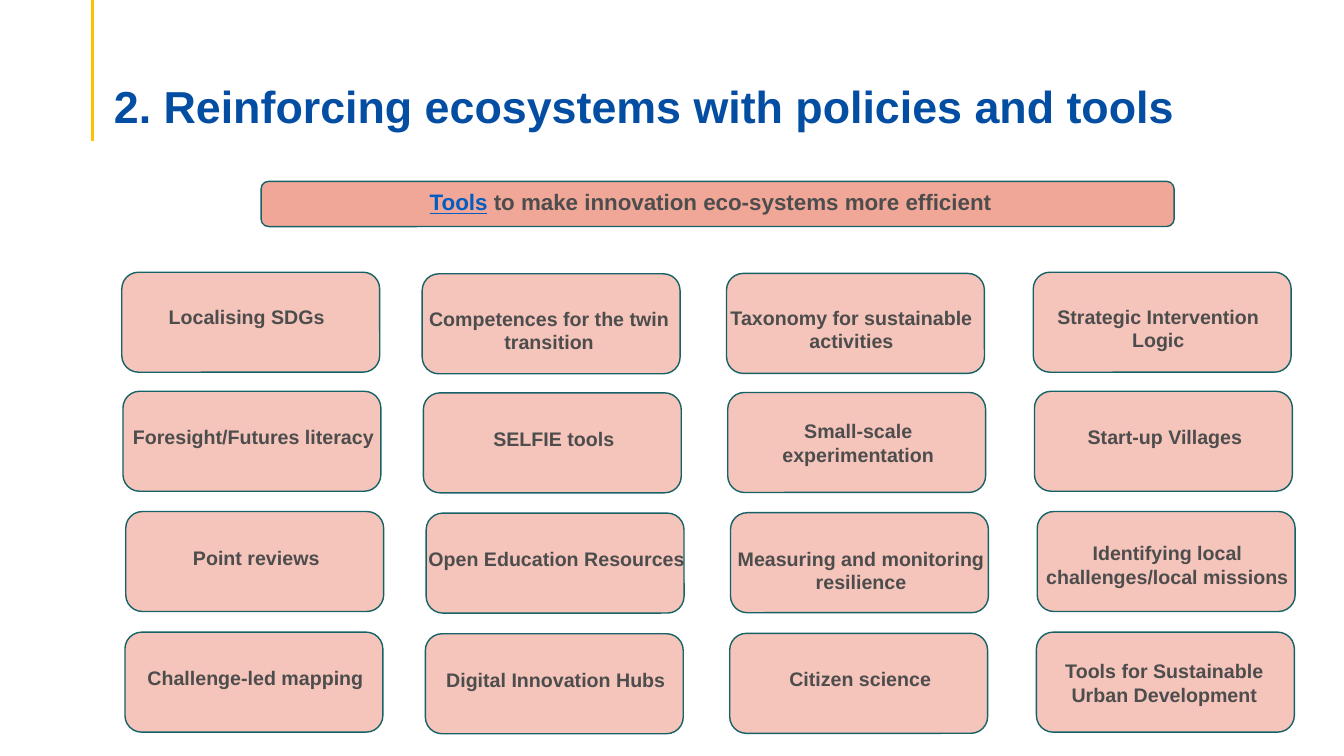
"""Build a slide showing a grid of policy tools for innovation ecosystems."""
from lxml import etree
from pptx import Presentation
from pptx.dml.color import RGBColor
from pptx.enum.shapes import MSO_CONNECTOR, MSO_SHAPE
from pptx.enum.text import MSO_ANCHOR, PP_ALIGN
from pptx.oxml.ns import qn
from pptx.util import Cm, Pt

COLORS = {
    "accent": "FFC000",
    "title": "034EA2",
    "link": "035DC1",
    "text": "4D4D4D",
    "banner": "F1A798",
    "card": "F5C4BA",
    "outline": "166267",
}

TOOL_ROWS = [
    ["Localising SDGs", "Competences for the twin transition",
     "Taxonomy for sustainable activities", "Strategic Intervention Logic"],
    ["Foresight/Futures literacy", "SELFIE tools",
     "Small-scale experimentation", "Start-up Villages"],
    ["Point reviews", "Open Education Resources",
     "Measuring and monitoring resilience", "Identifying local challenges/local missions"],
    ["Challenge-led mapping", "Digital Innovation Hubs",
     "Citizen science", "Tools for Sustainable Urban Development"],
]
COLUMNS = [(3.07, 0), (10.64, 0.04), (18.31, 0.03), (26.04, 0)]
ROWS = [(6.86, 0), (9.86, 0.03), (12.89, 0.1), (15.93, 0.08)]
LABEL_PLACES = {
    "Competences for the twin transition": (-0.18, 0.7, 6.76),
    "Small-scale experimentation": (-0.23, 0.55, 7.04),
    "Identifying local challenges/local missions": (-0.24, 0.62, 7.04),
    "Tools for Sustainable Urban Development": (-0.1, 0.55, 6.65),
}


def add_box(left, top, width, height, fill):
    box = slide.shapes.add_shape(
        MSO_SHAPE.ROUNDED_RECTANGLE, Cm(left), Cm(top), Cm(width), Cm(height))
    box.shadow.inherit = False
    box.fill.solid()
    box.fill.fore_color.rgb = RGBColor.from_string(COLORS[fill])
    box.line.color.rgb = RGBColor.from_string(COLORS["outline"])
    box.line.width = Pt(1)


def add_label(left, top, width, height, text, size, color="text"):
    frame = slide.shapes.add_textbox(
        Cm(left), Cm(top), Cm(width), Cm(height)).text_frame
    frame.word_wrap = True
    paragraph = frame.paragraphs[0]
    paragraph.text = text
    paragraph.alignment = PP_ALIGN.CENTER
    paragraph.font.name = "Arial"
    paragraph.font.size = Pt(size)
    paragraph.font.bold = True
    paragraph.font.color.rgb = RGBColor.from_string(COLORS[color])
    return frame


presentation = Presentation()
presentation.slide_width = Cm(33.87)
presentation.slide_height = Cm(19.05)
slide = presentation.slides.add_slide(presentation.slide_layouts[6])

accent = slide.shapes.add_connector(
    MSO_CONNECTOR.STRAIGHT, Cm(2.34), Cm(0), Cm(2.34), Cm(3.56))
accent.line.color.rgb = RGBColor.from_string(COLORS["accent"])
accent.line.width = Pt(2.25)
etree.SubElement(accent.element.spPr, qn("a:effectLst"))

title = add_label(2.62, 1.17, 29.21, 2.18,
                  "2. Reinforcing ecosystems with policies and tools", 32, "title")
title.vertical_anchor = MSO_ANCHOR.BOTTOM
title.margin_bottom = Cm(0)
title.paragraphs[0].alignment = PP_ALIGN.LEFT
title.paragraphs[0].line_spacing = 0.9

add_box(6.58, 4.57, 23.01, 1.14, "banner")
banner = add_label(6.63, 4.62, 22.56, 0.94, "Tools", 16)
tools_word = banner.paragraphs[0].runs[0]
tools_word.font.underline = True
tools_word.font.color.rgb = RGBColor.from_string(COLORS["link"])
banner.paragraphs[0].add_run().text = " to make innovation eco-systems more efficient"

for row, ((row_top, row_shift), tools) in enumerate(zip(ROWS, TOOL_ROWS)):
    default_place = (-0.23, 0.73, 7.04) if row else (-0.23, 0.69, 6.76)
    for (column_left, column_drop), tool in zip(COLUMNS, tools):
        left, top = column_left + row_shift, row_top + column_drop
        shift, drop, width = LABEL_PLACES.get(tool, default_place)
        add_box(left, top, 6.5, 2.52, "card")
        add_label(left + shift, top + drop, width, 1.3, tool, 14)

presentation.save("out.pptx")
